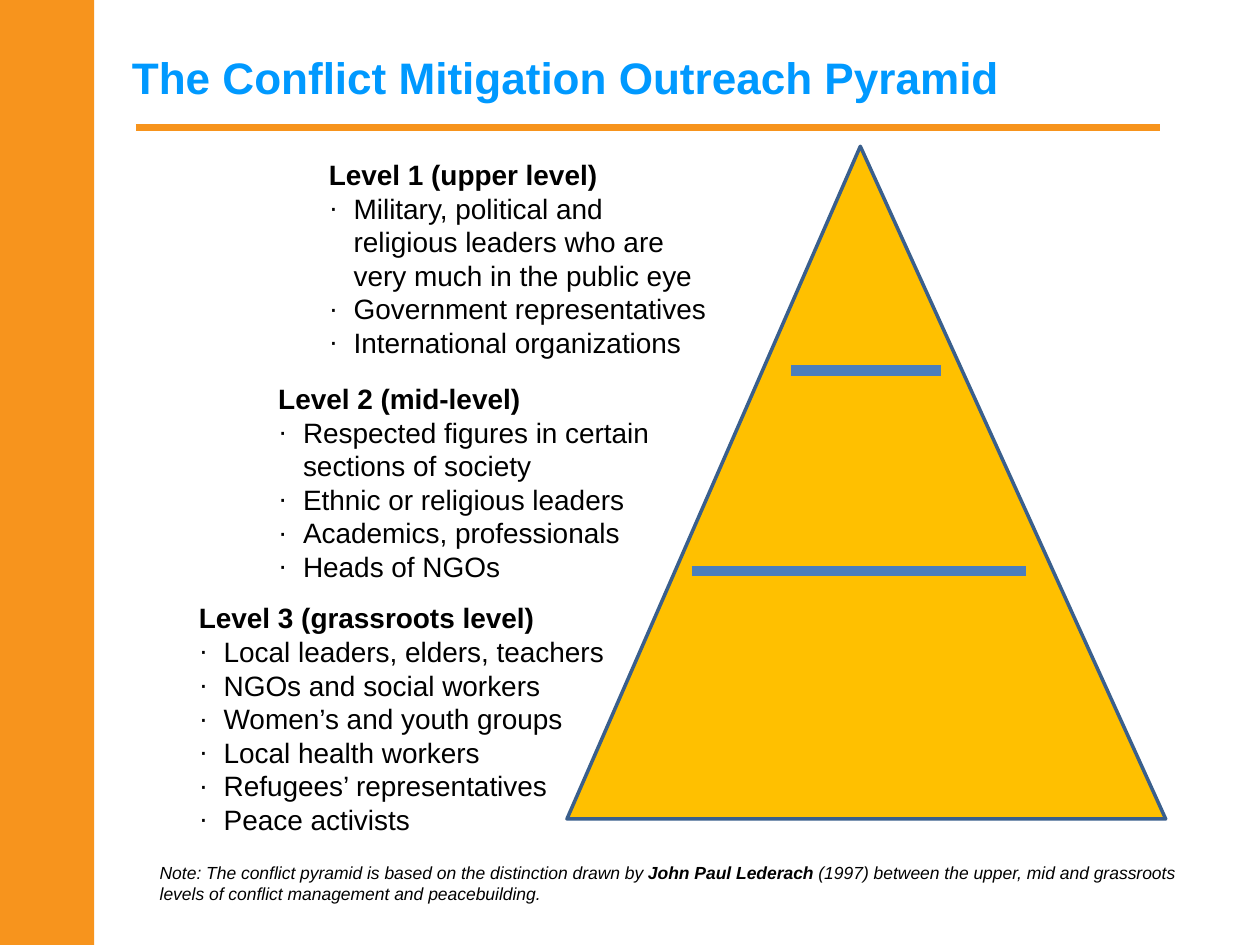
from dataclasses import dataclass

from lxml import etree
from pptx import Presentation
from pptx.dml.color import RGBColor
from pptx.enum.shapes import MSO_CONNECTOR, MSO_SHAPE
from pptx.enum.text import MSO_ANCHOR
from pptx.oxml.ns import qn
from pptx.util import Cm, Pt

RECT = MSO_SHAPE.RECTANGLE
TRIANGLE = MSO_SHAPE.ISOSCELES_TRIANGLE
STRAIGHT = MSO_CONNECTOR.STRAIGHT
TOP, MIDDLE = MSO_ANCHOR.TOP, MSO_ANCHOR.MIDDLE


@dataclass(frozen=True)
class Theme:
    font: str = "Arial"
    orange: str = "F7941D"
    title: str = "0099FF"
    gold: str = "FFC000"
    edge: str = "3A5F8C"
    divider: str = "4B7EBC"
    text: str = "000000"
    title_size: float = 25.2
    body_size: float = 16
    note_size: float = 10


LEVELS = [
    ((6.38, 3.05, 9.09, 4.37), "Level 1 (upper level)", [
        "Military, political and\vreligious leaders who are\vvery much in the public eye",
        "Government representatives",
        "International organizations",
    ]),
    ((5.36, 7.57, 8.61, 4.37), "Level 2 (mid-level)", [
        "Respected figures in certain\vsections of society",
        "Ethnic or religious leaders",
        "Academics, professionals",
        "Heads of NGOs",
    ]),
    ((3.76, 11.99, 8.81, 5.05), "Level 3 (grassroots level)", [
        "Local leaders, elders, teachers",
        "NGOs and social workers",
        "Women’s and youth groups",
        "Local health workers",
        "Refugees’ representatives",
        "Peace activists",
    ]),
]
DIVIDERS = [(15.95, 18.97, 7.47), (13.94, 20.68, 11.51)]
NOTE = [
    ("Note: The conflict pyramid is based on the distinction drawn by ", False),
    ("John Paul Lederach ", True),
    ("(1997) between the upper, mid and grassroots levels of conflict "
     "management and peacebuilding.", False),
]


class SlideBuilder:
    """Draw styled elements on one slide."""

    def __init__(self, slide, theme):
        self.s = slide
        self.theme = theme

    def shape(self, kind, box, fill, line=None, width=0):
        sp = self.s.shapes.add_shape(kind, *map(Cm, box))
        sp.shadow.inherit = False
        sp.fill.solid()
        sp.fill.fore_color.rgb = RGBColor.from_string(fill)
        if line:
            sp.line.color.rgb = RGBColor.from_string(line)
            sp.line.width = Pt(width)
        else:
            sp.line.fill.background()
        return sp

    def rule(self, x1, x2, y, color, width):
        line = self.s.shapes.add_connector(STRAIGHT, Cm(x1), Cm(y), Cm(x2), Cm(y))
        line.line.color.rgb = RGBColor.from_string(color)
        line.line.width = Pt(width)
        etree.SubElement(line._element.spPr, qn("a:effectLst"))

    def textbox(self, box, anchor=TOP):
        tf = self.s.shapes.add_textbox(*map(Cm, box)).text_frame
        tf.word_wrap = True
        tf.vertical_anchor = anchor
        return tf

    def run(self, p, text, size, color=None, **formats):
        r = p.add_run()
        r.text = text
        values = {"name": self.theme.font, "size": Pt(size), **formats}
        for name, value in values.items():
            setattr(r.font, name, value)
        r.font.color.rgb = RGBColor.from_string(color or self.theme.text)

    def bullet(self, p, text):
        pPr = p._p.get_or_add_pPr()
        indent = Cm(0.5)
        pPr.set("marL", str(indent))
        pPr.set("indent", str(-indent))
        etree.SubElement(pPr, qn("a:buFont"), typeface=self.theme.font)
        etree.SubElement(pPr, qn("a:buChar"), char="·")
        for i, part in enumerate(text.split("\v")):
            if i:
                p.add_line_break()
            self.run(p, part, self.theme.body_size)

    def level(self, box, heading, items):
        tf = self.textbox(box)
        self.run(tf.paragraphs[0], heading, self.theme.body_size, bold=True)
        for item in items:
            self.bullet(tf.add_paragraph(), item)


def main():
    prs = Presentation()
    prs.slide_width, prs.slide_height = Cm(25.4), Cm(19.05)
    theme = Theme()
    b = SlideBuilder(prs.slides.add_slide(prs.slide_layouts[6]), theme)

    b.shape(RECT, (0, 0, 1.9, 19.05), theme.orange)
    b.rule(2.74, 23.39, 2.57, theme.orange, 4)
    title = b.textbox((2.41, 0.86, 20.98, 1.4), MIDDLE)
    b.run(title.paragraphs[0], "The Conflict Mitigation Outreach Pyramid",
          theme.title_size, theme.title, bold=True)

    pyramid = b.shape(TRIANGLE, (11.43, 2.95, 12.07, 13.56), theme.gold, theme.edge, 2)
    pyramid.adjustments[0] = 0.49
    for x1, x2, y in DIVIDERS:
        b.rule(x1, x2, y, theme.divider, 6)
    for box, heading, items in LEVELS:
        b.level(box, heading, items)

    note = b.textbox((2.97, 17.25, 21.67, 1.12)).paragraphs[0]
    for text, bold in NOTE:
        b.run(note, text, theme.note_size, bold=bold, italic=True)
    prs.save("out.pptx")


if __name__ == "__main__":
    main()
